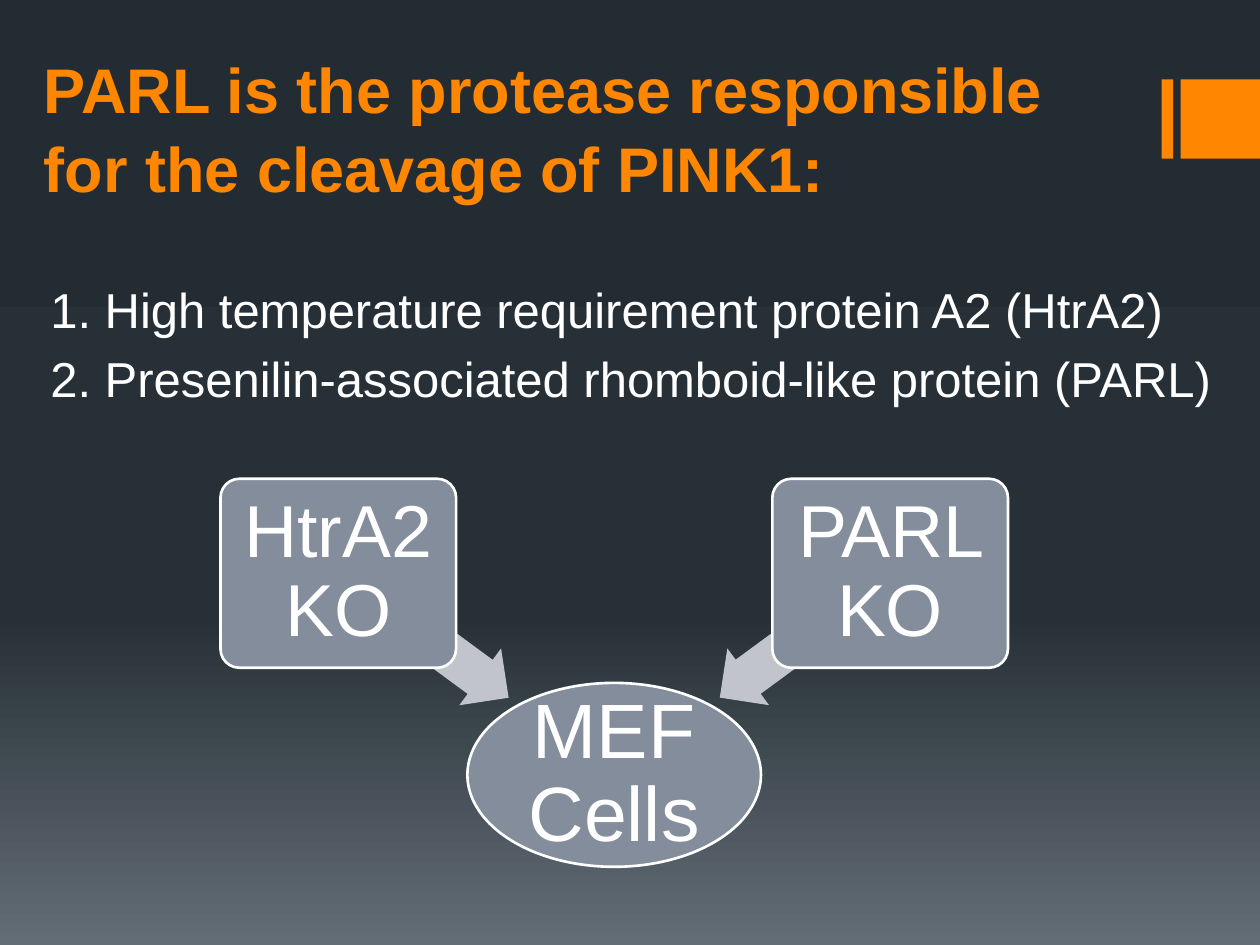
from copy import deepcopy

from pptx import Presentation
from pptx.dml.color import RGBColor
from pptx.enum.shapes import MSO_SHAPE
from pptx.enum.text import MSO_ANCHOR, PP_ALIGN
from pptx.oxml.ns import qn
from pptx.util import Inches, Pt

ORANGE = RGBColor(0xFF, 0x86, 0x00)
WHITE = RGBColor(0xFF, 0xFF, 0xFF)
SLATE = RGBColor(0x83, 0x8D, 0x9B)
PALE = RGBColor(0xC1, 0xC5, 0xCB)
BACKDROP = [
    (0, RGBColor(0x24, 0x2C, 0x33)),
    (0.65, RGBColor(0x27, 0x30, 0x37)),
    (1, RGBColor(0x63, 0x6D, 0x76)),
]
FONT = "Arial"


def paint_background(slide):
    fill = slide.background.fill
    fill.gradient()
    fill.gradient_angle = 270  # counter-clockwise: dark at the top
    # The default gradient has two stops; add a third
    first_stop = fill.gradient_stops[0]
    stop_list = slide.background._cSld.find(".//" + qn("a:gsLst"))
    stop_list.append(deepcopy(stop_list[0]))
    for stop, (position, color) in zip(fill.gradient_stops, BACKDROP):
        stop.position = position
        stop.color.rgb = color


def add_shape(slide, preset, left, top, width, height, color, outline=None):
    shape = slide.shapes.add_shape(
        preset, Inches(left), Inches(top), Inches(width), Inches(height))
    shape.shadow.inherit = False
    shape.fill.solid()
    shape.fill.fore_color.rgb = color
    if outline is None:
        shape.line.fill.background()
    else:
        shape.line.color.rgb = outline
        shape.line.width = Pt(1.5)
    return shape


def add_text(paragraph, text, size, color, bold=False):
    run = paragraph.add_run()
    run.text = text
    run.font.name = FONT
    run.font.size = Pt(size)
    run.font.bold = bold
    run.font.color.rgb = color


def add_text_frame(slide, left, top, width, height):
    frame = slide.shapes.add_textbox(
        Inches(left), Inches(top), Inches(width), Inches(height)).text_frame
    frame.word_wrap = True
    return frame


def add_corner_mark(slide, left, top, size):
    # Thin bar followed by a square that meets the slide edge
    add_shape(slide, MSO_SHAPE.RECTANGLE, left, top, 0.09, size, ORANGE)
    add_shape(slide, MSO_SHAPE.RECTANGLE, left + 0.15, top, size, size, ORANGE)


def add_title(slide, left, top, width, height):
    frame = add_text_frame(slide, left, top, width, height)
    frame.vertical_anchor = MSO_ANCHOR.BOTTOM
    heading = frame.paragraphs[0]
    heading.line_spacing = 1.05
    add_text(heading,
             "PARL is the protease responsible for the cleavage of PINK1:",
             36, ORANGE, bold=True)


def add_candidates(slide, left, top, width, height):
    frame = add_text_frame(slide, left, top, width, height)
    frame.margin_left = Inches(0.15)
    candidates = [
        "1. High temperature requirement protein A2 (HtrA2)",
        "2. Presenilin-associated rhomboid-like protein (PARL)",
    ]
    for index, candidate in enumerate(candidates):
        item = frame.add_paragraph() if index else frame.paragraphs[0]
        item.space_before = Pt(6)
        add_text(item, candidate, 28, WHITE)


def add_node(slide, preset, box, label, size, margin):
    node = add_shape(slide, preset, *box, SLATE, WHITE)
    frame = node.text_frame
    frame.word_wrap = True
    frame.vertical_anchor = MSO_ANCHOR.MIDDLE
    frame.margin_left = frame.margin_right = Inches(margin)
    frame.margin_top = frame.margin_bottom = Inches(margin)
    caption = frame.paragraphs[0]
    caption.alignment = PP_ALIGN.CENTER
    caption.line_spacing = 0.9
    add_text(caption, label, size, WHITE)
    return node


def add_knockout_diagram(slide, left, top, width, height):
    center = left + width / 2
    cells_width, cells_height = 2.33, 1.46
    card_width, card_height = 1.87, 1.5
    arrow_width, arrow_height = 1.68, 0.56

    # Shared target
    add_node(slide, MSO_SHAPE.OVAL,
             (center - cells_width / 2, top + height - cells_height,
              cells_width, cells_height), "MEF Cells", 44, 0.03)

    # Mirrored knockouts, each card covering the tail of its arrow
    for side, label, angle in ((-1, "HtrA2 KO", 216.3), (1, "PARL KO", 323.7)):
        arrow = add_shape(slide, MSO_SHAPE.LEFT_ARROW,
                          center + side * 1.515 - arrow_width / 2, top + 0.96,
                          arrow_width, arrow_height, PALE)
        arrow.adjustments[0] = 0.6
        arrow.adjustments[1] = 0.5
        arrow.rotation = angle
        card_left = left if side < 0 else left + width - card_width
        card = add_node(slide, MSO_SHAPE.ROUNDED_RECTANGLE,
                        (card_left, top, card_width, card_height),
                        label, 42, 0.09)
        card.adjustments[0] = 0.1


def main():
    prs = Presentation()
    prs.slide_width, prs.slide_height = Inches(10), Inches(7.5)
    slide = prs.slides.add_slide(prs.slide_layouts[6])
    paint_background(slide)
    add_corner_mark(slide, 9.22, 0.63, 0.63)
    add_title(slide, 0.25, 0.42, 8.5, 1.26)
    add_candidates(slide, 0.25, 2.17, 9.5, 1.42)
    add_knockout_diagram(slide, 1.75, 3.8, 6.25, 3.08)
    prs.save("out.pptx")


if __name__ == "__main__":
    main()
